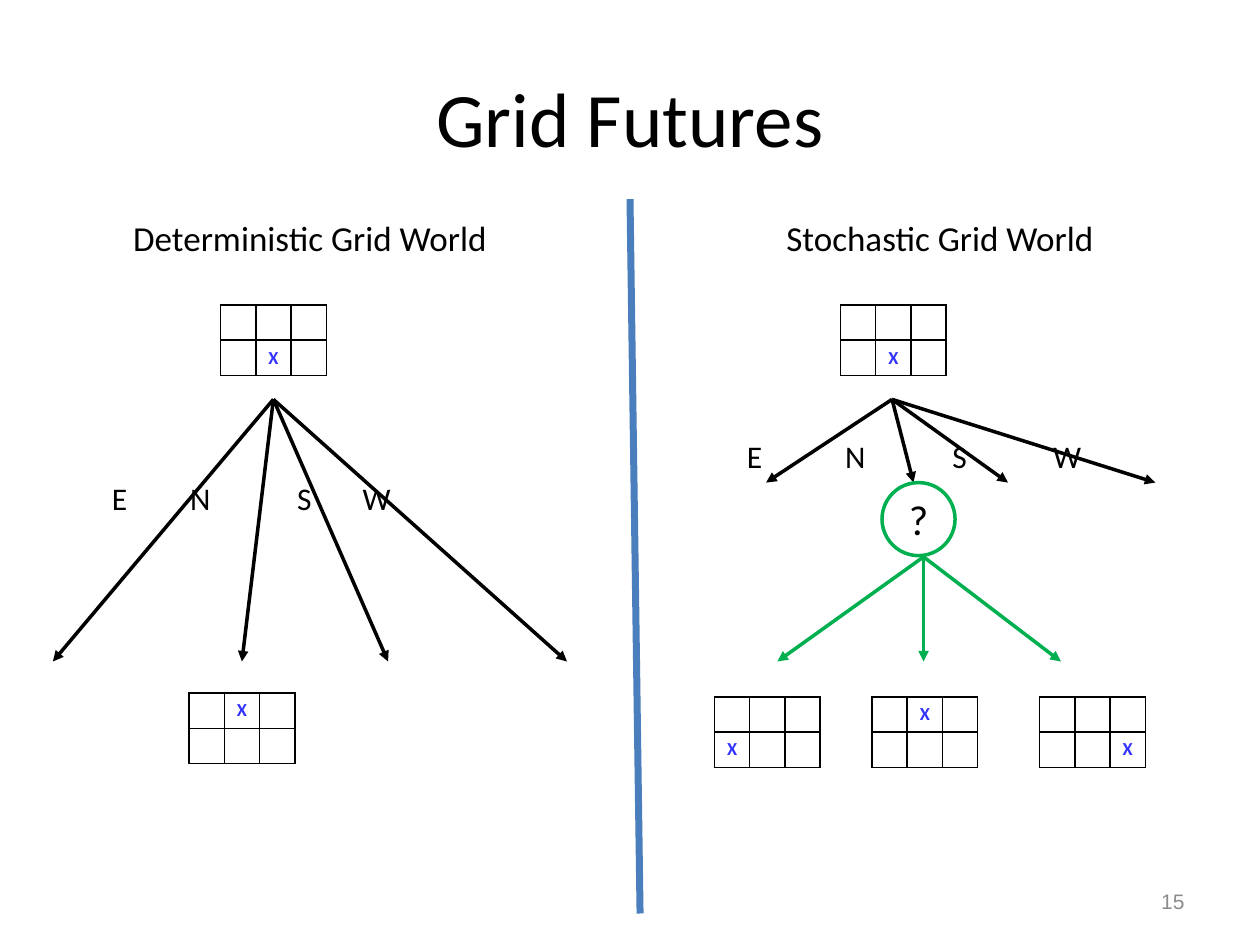
"""Build the Grid Futures slide comparing two kinds of grid world."""
import lxml.etree
import pptx
import pptx.dml.color
import pptx.enum.shapes
import pptx.enum.text
import pptx.oxml.ns
import pptx.util

Inches, Pt = pptx.util.Inches, pptx.util.Pt
ALIGN = pptx.enum.text.PP_ALIGN
MIDDLE = pptx.enum.text.MSO_ANCHOR.MIDDLE
qn = pptx.oxml.ns.qn

THEME = {
    "ink": "000000", "paper": "FFFFFF", "mark": "3333FF", "chance": "00B050",
    "rule": "4B7EBC", "muted": "8C8C8C", "font": "Calibri", "plain": "Arial",
    "title": 44, "query": 24, "head": 20, "move": 18, "page": 12, "cell": 10.5,
}
TITLE = ("Grid Futures", (0.5, 0.3, 9, 1.25))
PAGE = ("15", (7.17, 6.95, 2.33, 0.4))
HEADS = [("Deterministic Grid World", 0.67), ("Stochastic Grid World", 5.67)]
MOVES = [
    ("E\tN\tS\tW", (0.79, 3.75), (0.62, 1.47, 1.99)),
    ("E\tN\tS\tW", (5.83, 3.42), (0.78, 1.63, 2.43)),
]
GRIDS = [
    ((1.75, 2.42), (1, 1)), ((1.5, 5.5), (0, 1)), ((6.67, 2.42), (1, 1)),
    ((6.92, 5.53), (0, 1)), ((5.67, 5.53), (1, 0)), ((8.25, 5.53), (1, 2)),
]
ROWS, COLS, CELL = 2, 3, 0.28
FANS = [
    ((2.17, 3.17), 5.25, (0.42, 1.92, 3.08, 4.5), "ink"),
    ((7.08, 3.17), 3.83, (6.08, 7.25, 8, 9.17), "ink"),
    ((7.33, 4.42), 5.25, (6.17, 7.33, 8.42), "chance"),
]
RULE = ((5, 1.58), (5.08, 7.25))
QUERY = ("?", (7, 3.83, 0.58, 0.58))


def tint(name):
    return pptx.dml.color.RGBColor.from_string(THEME[name])


def apply(item, **values):
    for name, value in values.items():
        setattr(item, name, value)


def place(shape, box):
    sides = ("left", "top", "width", "height")
    apply(shape, **{side: Inches(size) for side, size in zip(sides, box)})


def write(frame, text, size, color="ink", face="font", align=ALIGN.CENTER, bold=False):
    para = frame.paragraphs[0]
    para.alignment = align
    run = para.add_run()
    run.text = text
    apply(run.font, size=Pt(THEME[size]), name=THEME[face], bold=bold)
    run.font.color.rgb = tint(color)
    return para


def label(slide, box, text, size, **style):
    frame = slide.shapes.add_textbox(*map(Inches, box)).text_frame
    frame.word_wrap = True
    return frame, write(frame, text, size, **style)


def add_moves(slide, text, spot, stops):
    para = label(slide, (*spot, 3.58, 0.4), text, "move", align=ALIGN.LEFT)[1]
    tabs = lxml.etree.SubElement(para._p.get_or_add_pPr(), qn("a:tabLst"))
    for stop in stops:
        lxml.etree.SubElement(tabs, qn("a:tab"), pos=str(Inches(stop)), algn="l")


def edge(cell):
    props = cell._tc.get_or_add_tcPr()
    for spot, side in enumerate(("lnL", "lnR", "lnT", "lnB")):
        line = lxml.etree.Element(qn("a:" + side), w=str(Pt(1)))
        fill = lxml.etree.SubElement(line, qn("a:solidFill"))
        lxml.etree.SubElement(fill, qn("a:srgbClr"), val=THEME["ink"])
        props.insert(spot, line)


def add_grid(slide, spot, mark):
    size = (COLS * CELL, ROWS * CELL)
    table = slide.shapes.add_table(ROWS, COLS, *map(Inches, (*spot, *size))).table
    apply(table, first_row=False, horz_banding=False)
    for col in table.columns:
        col.width = Inches(CELL)
    for r, row in enumerate(table.rows):
        row.height = Inches(CELL)
        for c, cell in enumerate(row.cells):
            apply(cell, margin_left=0, margin_right=0, margin_top=0,
                  margin_bottom=0, vertical_anchor=MIDDLE)
            cell.fill.solid()
            cell.fill.fore_color.rgb = tint("paper")
            edge(cell)
            if (r, c) == mark:
                write(cell.text_frame, "X", "cell", "mark", bold=True)
            else:
                para = cell.text_frame.paragraphs[0]._p
                lxml.etree.SubElement(para, qn("a:endParaRPr"), sz=str(int(THEME["cell"] * 100)))


def add_line(shapes, start, end, color, width, arrow=False):
    kind = pptx.enum.shapes.MSO_CONNECTOR.STRAIGHT
    line = shapes.add_connector(kind, *map(Inches, (*start, *end)))
    line.line.color.rgb = tint(color)
    line.line.width = Pt(width)
    if arrow:
        lxml.etree.SubElement(line.line._get_or_add_ln(), qn("a:tailEnd"), type="triangle")
    lxml.etree.SubElement(line._element.spPr, qn("a:effectLst"))


def add_fan(slide, start, floor, ends, color):
    group = slide.shapes.add_group_shape()
    for x in ends:
        add_line(group.shapes, start, (x, floor), color, 2, arrow=True)


def add_query(slide, text, box):
    oval = pptx.enum.shapes.MSO_SHAPE.OVAL
    shape = slide.shapes.add_shape(oval, *map(Inches, box))
    shape.shadow.inherit = False
    shape.fill.solid()
    shape.fill.fore_color.rgb = tint("paper")
    shape.line.color.rgb = tint("chance")
    shape.line.width = Pt(2)
    shape.text_frame.vertical_anchor = MIDDLE
    write(shape.text_frame, text, "query")


def main():
    deck = pptx.Presentation()
    apply(deck, slide_width=Inches(10), slide_height=Inches(7.5))
    slide = deck.slides.add_slide(deck.slide_layouts[5])
    title = slide.shapes.title
    place(title, TITLE[1])
    title.text_frame.vertical_anchor = MIDDLE
    write(title.text_frame, TITLE[0], "title")
    frame = label(slide, PAGE[1], PAGE[0], "page", color="muted",
                  face="plain", align=ALIGN.RIGHT)[0]
    frame.vertical_anchor = MIDDLE
    for text, left in HEADS:
        label(slide, (left, 1.67, 3.58, 0.44), text, "head")
    for grid in GRIDS:
        add_grid(slide, *grid)
    for fan in FANS[:2]:
        add_fan(slide, *fan)
    for move in MOVES:
        add_moves(slide, *move)
    add_line(slide.shapes, *RULE, "rule", 4)
    add_query(slide, *QUERY)
    add_fan(slide, *FANS[2])
    deck.save("out.pptx")


if __name__ == "__main__":
    main()
